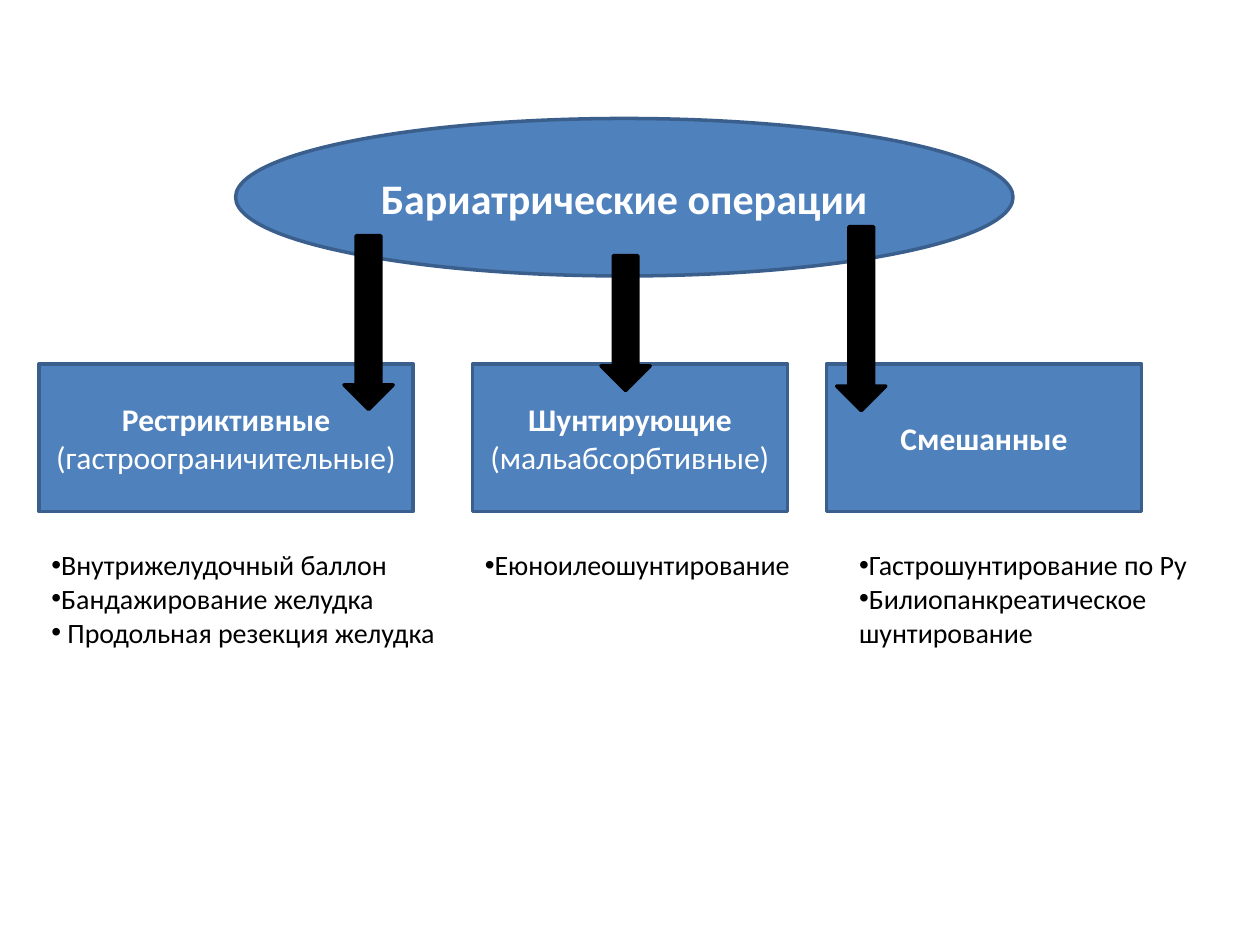
from lxml import etree
from pptx import Presentation
from pptx.dml.color import RGBColor
from pptx.enum.shapes import MSO_SHAPE
from pptx.enum.text import MSO_ANCHOR, MSO_AUTO_SIZE, PP_ALIGN
from pptx.oxml.ns import qn
from pptx.util import Inches, Pt

OVAL, RECT, DOWN_ARROW = MSO_SHAPE.OVAL, MSO_SHAPE.RECTANGLE, MSO_SHAPE.DOWN_ARROW
MIDDLE, CENTER = MSO_ANCHOR.MIDDLE, PP_ALIGN.CENTER
NO_AUTOSIZE = MSO_AUTO_SIZE.NONE

BLUE = RGBColor(0x4F, 0x81, 0xBD)
DARK_BLUE = RGBColor(0x3A, 0x5F, 0x8C)
BLACK = RGBColor(0, 0, 0)
WHITE = RGBColor(0xFF, 0xFF, 0xFF)

FONT = "Calibri"
BOX_TOP, BOX_HEIGHT = 2.89, 1.17
LIST_TOP = 4.3
ARROW_WIDTH = 0.39

BOXES = [
    (0.31, 2.97, [("Рестриктивные ", True), ("(гастроограничительные)", False)]),
    (3.75, 2.5, [("Шунтирующие ", True), ("(мальабсорбтивные)", False)]),
    (6.56, 2.5, [("Смешанные", True)]),
]
ARROWS = [(2.73, 1.87, 1.38), (4.77, 2.03, 1.07), (6.64, 1.8, 1.46)]
LISTS = [
    (0.31, 3.28, 1.51, [("Внутрижелудочный баллон", True),
                        ("Бандажирование желудка", True),
                        (" Продольная резекция желудка", True)]),
    (3.75, 2.65, 0.37, [("Еюноилеошунтирование", True)]),
    (6.72, 2.84, 0.91, [("Гастрошунтирование по Ру", True),
                        ("Билиопанкреатическое", True),
                        ("шунтирование", False)]),
]


def add_run(p, text, size, color, bold=False):
    r = p.add_run()
    r.text = text
    r.font.name = FONT
    r.font.size = Pt(size)
    r.font.bold = bold
    r.font.color.rgb = color


def add_block(s, kind, left, top, width, height, fill, line):
    sp = s.shapes.add_shape(kind, Inches(left), Inches(top), Inches(width), Inches(height))
    sp.shadow.inherit = False
    sp.fill.solid()
    sp.fill.fore_color.rgb = fill
    sp.line.color.rgb = line
    sp.line.width = Pt(2)
    return sp


def add_label(s, kind, left, top, width, height, runs, size):
    sp = add_block(s, kind, left, top, width, height, BLUE, DARK_BLUE)
    tf = sp.text_frame
    tf.word_wrap = True
    tf.vertical_anchor = MIDDLE
    p = tf.paragraphs[0]
    p.alignment = CENTER
    for text, bold in runs:
        add_run(p, text, size, WHITE, bold)


def add_bullet(p):
    pPr = p._p.get_or_add_pPr()
    etree.SubElement(pPr, qn("a:buFont")).set("typeface", "Arial")
    etree.SubElement(pPr, qn("a:buChar")).set("char", "•")


def add_list(s, left, width, height, items):
    sp = s.shapes.add_textbox(Inches(left), Inches(LIST_TOP), Inches(width), Inches(height))
    tf = sp.text_frame
    tf.word_wrap = False
    tf.auto_size = NO_AUTOSIZE
    for i, (text, bulleted) in enumerate(items):
        p = tf.add_paragraph() if i else tf.paragraphs[0]
        if bulleted:
            add_bullet(p)
        add_run(p, text, 16, BLACK)


def main():
    prs = Presentation()
    prs.slide_width, prs.slide_height = Inches(10), Inches(7.5)
    s = prs.slides.add_slide(prs.slide_layouts[6])
    add_label(s, OVAL, 1.87, 0.94, 6.17, 1.25, [("Бариатрические операции", True)], 24)
    for left, width, runs in BOXES:
        add_label(s, RECT, left, BOX_TOP, width, BOX_HEIGHT, runs, 18)
    for left, top, height in ARROWS:
        add_block(s, DOWN_ARROW, left, top, ARROW_WIDTH, height, BLACK, BLACK)
    for left, width, height, items in LISTS:
        add_list(s, left, width, height, items)
    prs.save("out.pptx")


if __name__ == "__main__":
    main()
